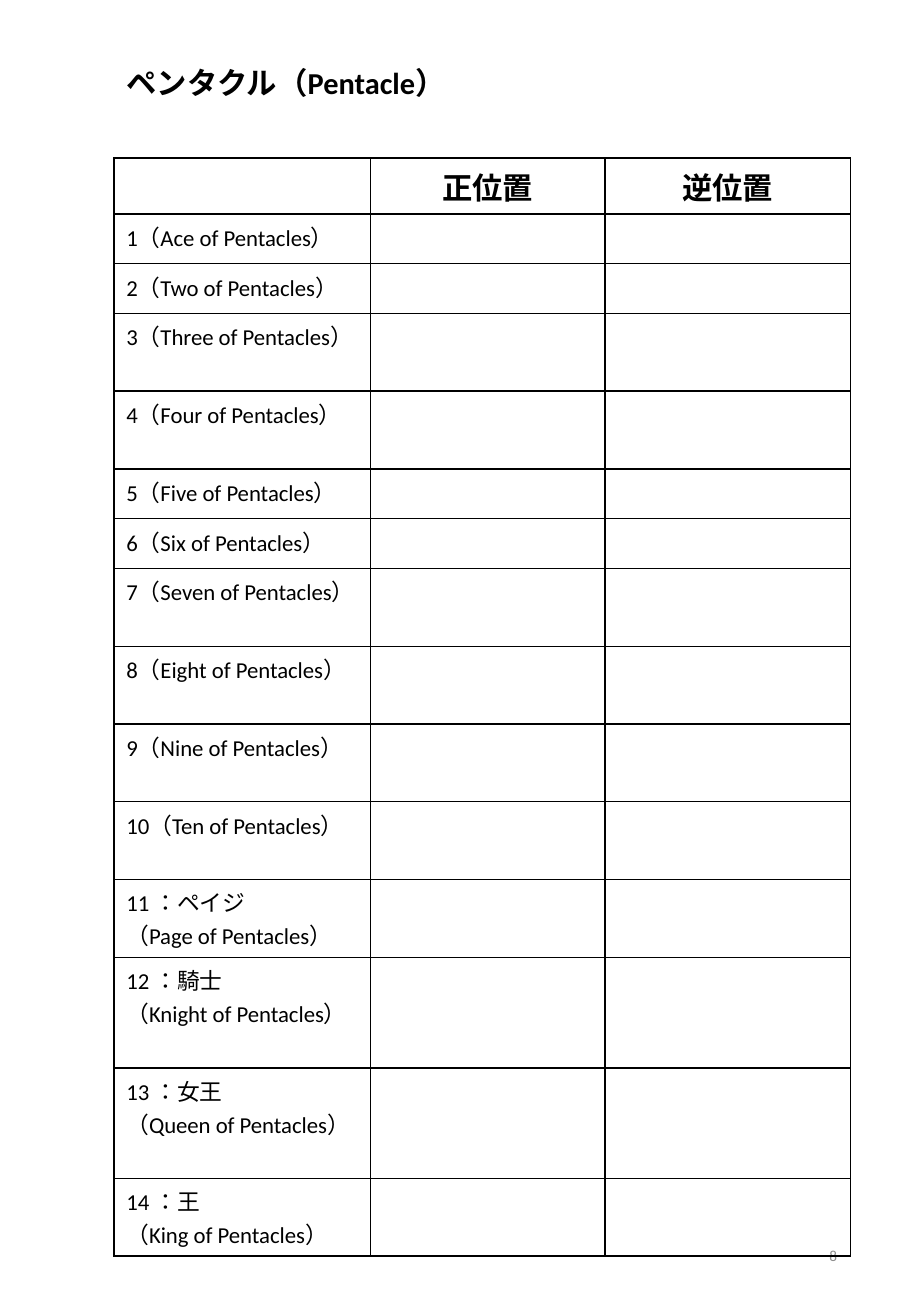
from lxml import etree
from pptx import Presentation
from pptx.dml.color import RGBColor
from pptx.enum import lang, text
from pptx.oxml import ns
from pptx.util import Inches, Pt

BLACK = RGBColor(0x00, 0x00, 0x00)
GRAY = RGBColor(0x8C, 0x8C, 0x8C)
HEADINGS = ["", "正位置", "逆位置"]
NUMBERS = ["Ace", "Two", "Three", "Four", "Five",
           "Six", "Seven", "Eight", "Nine", "Ten"]
COURT = [("ペイジ", "Page"), ("騎士", "Knight"), ("女王", "Queen"), ("王", "King")]
COL_WIDTHS = [2.11, 1.93, 2.02]
HEADING_HEIGHT = 0.46
LINE_HEIGHTS = {1: 0.41, 2: 0.64, 3: 0.91}
CARD_LINES = [1, 1, 2, 2, 1, 1, 2, 2, 2, 2, 2, 3, 3, 2]
BASE = {"name": "Calibri", "language_id": lang.MSO_LANGUAGE_ID.JAPANESE}
HEADING = {**BASE, "size": Pt(18), "bold": True}
CARD = {**BASE, "size": Pt(13.5), "bold": False}
PAGE = {**BASE, "size": Pt(9), "bold": False}


def write(tf, content, style, color, align):
    """Fill a text frame with formatted paragraphs, one per line."""
    tf.text = content
    for p in tf.paragraphs:
        p.alignment = align
        for r in p.runs:
            for key, value in style.items():
                setattr(r.font, key, value)
            r.font.color.rgb = color


def add_borders(cell):
    """Draw a thin black line on each side of a cell."""
    tc_pr = cell._tc.get_or_add_tcPr()
    for i, side in enumerate(("lnL", "lnR", "lnT", "lnB")):
        ln = etree.Element(ns.qn(f"a:{side}"), w=str(Pt(1)))
        fill = etree.SubElement(ln, ns.qn("a:solidFill"))
        etree.SubElement(fill, ns.qn("a:srgbClr"), val=str(BLACK))
        tc_pr.insert(i, ln)


def add_title(slide, x, y, w, h):
    """Place the suit name in the title placeholder."""
    sp = slide.shapes.title
    sp.left, sp.top, sp.width, sp.height = (Inches(v) for v in (x, y, w, h))
    tf = sp.text_frame
    write(tf, "ペンタクル（Pentacle）", HEADING, BLACK, text.PP_ALIGN.LEFT)
    tf.word_wrap = True
    tf.auto_size = text.MSO_AUTO_SIZE.SHAPE_TO_FIT_TEXT
    tf.vertical_anchor = text.MSO_ANCHOR.TOP


def add_card_table(slide, x, y):
    """Place the table of cards with upright and reversed columns."""
    cards = [f"{i}（{name} of Pentacles）" for i, name in enumerate(NUMBERS, 1)]
    cards += [f"{i} ：{rank}\n（{name} of Pentacles）"
              for i, (rank, name) in enumerate(COURT, len(NUMBERS) + 1)]
    rows = [HEADINGS] + [[card, "", ""] for card in cards]
    heights = [HEADING_HEIGHT] + [LINE_HEIGHTS[n] for n in CARD_LINES]
    table = slide.shapes.add_table(
        len(rows), len(COL_WIDTHS), Inches(x), Inches(y),
        Inches(sum(COL_WIDTHS)), Inches(sum(heights))).table
    table.first_row = table.horz_banding = False
    for col, width in zip(table.columns, COL_WIDTHS):
        col.width = Inches(width)
    for i, (row, height) in enumerate(zip(rows, heights)):
        table.rows[i].height = Inches(height)
        style, align = ((CARD, text.PP_ALIGN.LEFT) if i
                        else (HEADING, text.PP_ALIGN.CENTER))
        for j, content in enumerate(row):
            cell = table.cell(i, j)
            cell.fill.background()
            add_borders(cell)
            if content:
                write(cell.text_frame, content, style, BLACK, align)


def add_page_number(slide, x, y, w, h):
    """Place the page number at the lower right."""
    sp = slide.shapes.add_textbox(Inches(x), Inches(y), Inches(w), Inches(h))
    tf = sp.text_frame
    tf.word_wrap = True
    tf.vertical_anchor = text.MSO_ANCHOR.MIDDLE
    write(tf, "8", PAGE, GRAY, text.PP_ALIGN.RIGHT)


def main():
    """Build and save the slide."""
    prs = Presentation()
    prs.slide_width, prs.slide_height = Inches(7.5), Inches(10.83)
    slide = prs.slides.add_slide(prs.slide_layouts[5])
    add_page_number(slide, 5.3, 10.04, 1.69, 0.58)
    add_card_table(slide, 0.94, 1.3)
    add_title(slide, 0.94, 0.48, 4.05, 0.4)
    prs.save("out.pptx")


if __name__ == "__main__":
    main()
